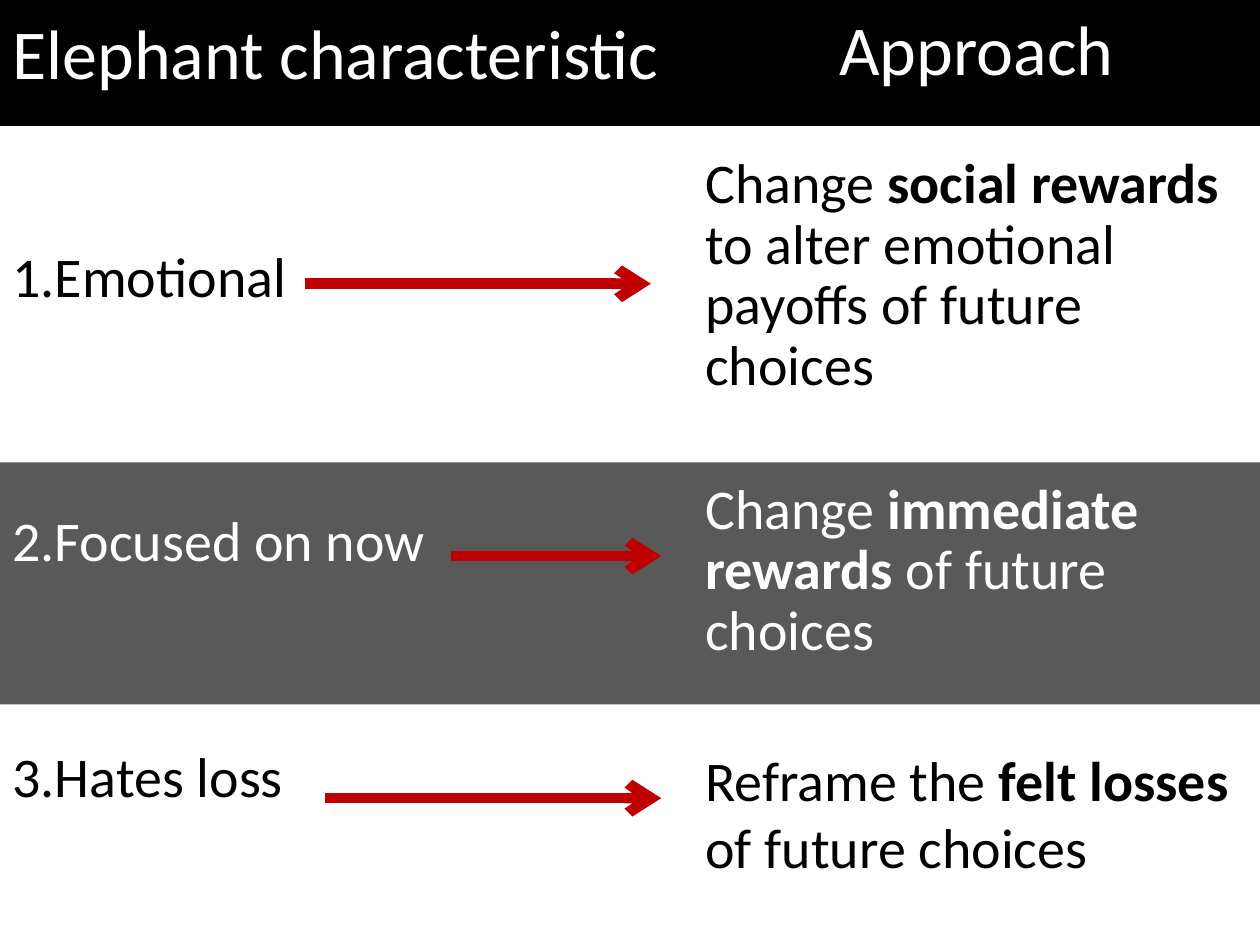
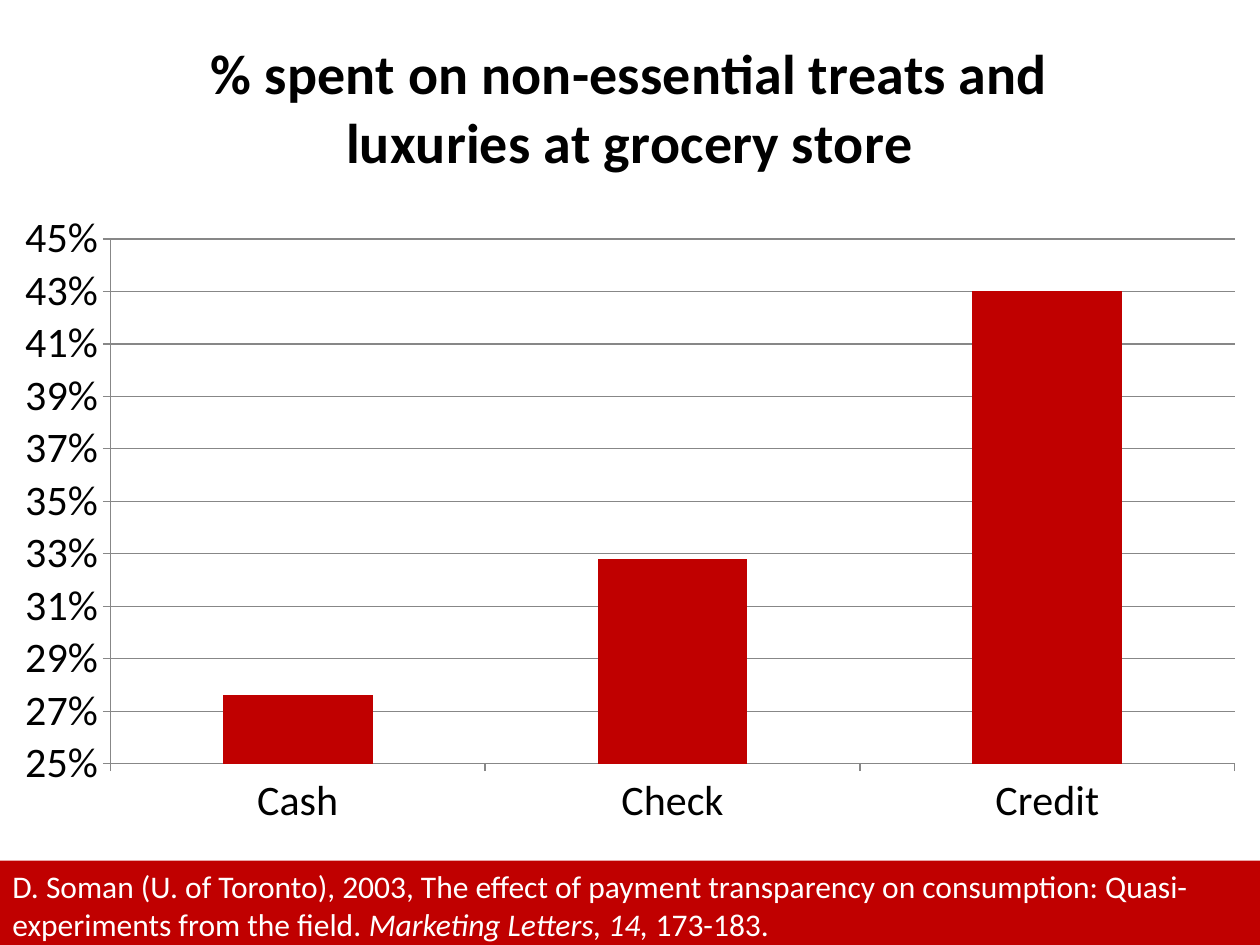
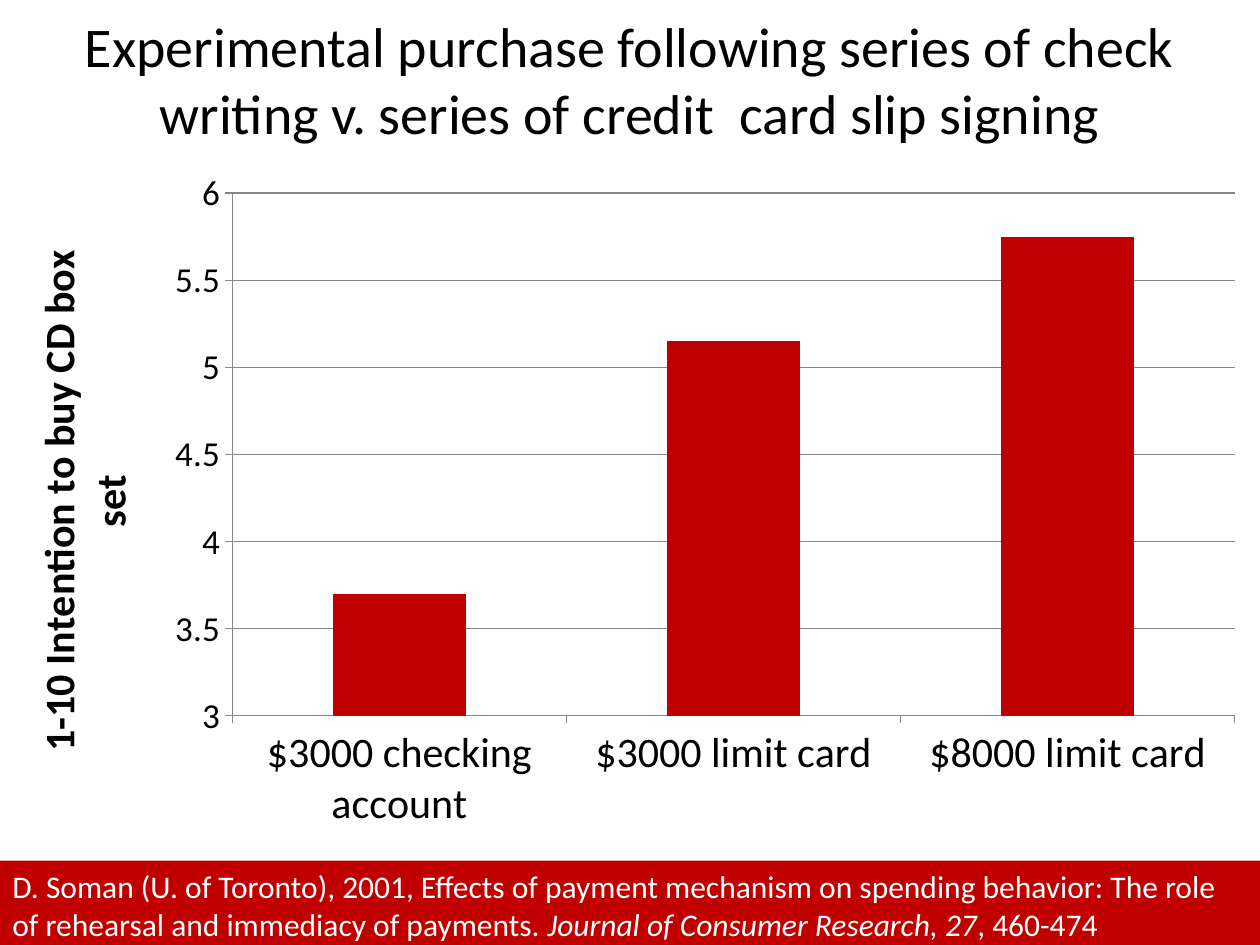
from dataclasses import dataclass

from lxml import etree
from pptx import Presentation
from pptx.chart.data import CategoryChartData
from pptx.dml.color import RGBColor
from pptx.enum.chart import XL_CHART_TYPE, XL_TICK_MARK
from pptx.enum.shapes import MSO_CONNECTOR, MSO_SHAPE
from pptx.enum.text import MSO_ANCHOR, PP_ALIGN
from pptx.oxml.ns import qn
from pptx.util import Cm, Pt

COLUMNS = XL_CHART_TYPE.COLUMN_CLUSTERED
TICK_OUTSIDE = XL_TICK_MARK.OUTSIDE
STRAIGHT = MSO_CONNECTOR.STRAIGHT
RECTANGLE = MSO_SHAPE.RECTANGLE
TOP, MIDDLE = MSO_ANCHOR.TOP, MSO_ANCHOR.MIDDLE
LEFT, CENTER = PP_ALIGN.LEFT, PP_ALIGN.CENTER


@dataclass(frozen=True)
class Theme:
    font: str = "Calibri"
    black: RGBColor = RGBColor(0x00, 0x00, 0x00)
    white: RGBColor = RGBColor(0xFF, 0xFF, 0xFF)
    gray: RGBColor = RGBColor(0x59, 0x59, 0x59)
    red: RGBColor = RGBColor(0xC0, 0x00, 0x00)
    grid: RGBColor = RGBColor(0x87, 0x87, 0x87)
    heading: int = 40
    body: int = 32
    axis: int = 24
    small_axis: int = 20
    source: int = 18
    arrow: int = 6


theme = Theme()
WIDTH, HEIGHT = 25.4, 19.05
INSET = 0.25


def add_band(page, top, height, color):
    band = page.shapes.add_shape(RECTANGLE, 0, Cm(top), Cm(WIDTH), Cm(height))
    band.shadow.inherit = False
    band.fill.solid()
    band.fill.fore_color.rgb = color
    band.line.fill.background()
    return band


def write(box, spans, size=theme.body, color=theme.black, align=LEFT,
          anchor=TOP, spacing=1.0, padding=0.0, number=None):
    """Fill a box with one paragraph of (text, style) spans; style is "", "b" or "i"."""
    frame = box.text_frame
    frame.word_wrap = True
    frame.vertical_anchor = anchor
    frame.margin_left = frame.margin_right = Cm(INSET)
    frame.margin_top = frame.margin_bottom = Cm(padding)
    para = frame.paragraphs[0]
    para.alignment = align
    para.line_spacing = spacing
    for text, style in spans:
        span = para.add_run()
        span.text = text
        span.font.name = theme.font
        span.font.size = Pt(size)
        span.font.color.rgb = color
        span.font.bold = style == "b"
        span.font.italic = style == "i"
    if number:
        properties = para._p.get_or_add_pPr()
        properties.set("marL", "0")
        properties.set("indent", "0")
        etree.SubElement(properties, qn("a:buFont"), typeface="+mj-lt")
        etree.SubElement(properties, qn("a:buAutoNum"),
                         type="arabicPeriod", startAt=str(number))


deck = Presentation()
deck.slide_width, deck.slide_height = Cm(WIDTH), Cm(HEIGHT)
blank = deck.slide_layouts[6]

# Slide 1: characteristics and approaches
page = deck.slides.add_slide(blank)
add_band(page, 0, 2.54, theme.black)
add_band(page, 9.32, 4.88, theme.gray)

LEFT_COLUMN = (0, 13.77)
RIGHT_COLUMN = (13.97, 11.43)
headings = [
    ("Elephant characteristic", LEFT_COLUMN, 0.19, LEFT, 1.0),
    ("Approach", RIGHT_COLUMN, 0.3, CENTER, 0.9),
]
for text, (left, width), top, align, spacing in headings:
    box = page.shapes.add_textbox(Cm(left), Cm(top), Cm(width), Cm(1.8))
    write(box, [(text, "")], size=theme.heading, color=theme.white,
          align=align, spacing=spacing)

# characteristic, its top, approach, its top, line spacing, colour, arrow (start, end, height)
rows = [
    ("Emotional", 4.87,
     [("Change ", ""), ("social rewards ", "b"),
      ("to alter emotional payoffs of future choices", "")],
     3.13, 0.9, theme.black, (6.14, 13.12, 5.72)),
    ("Focused on now", 10.2,
     [("Change ", ""), ("immediate rewards", "b"), (" of future choices", "")],
     9.69, 0.9, theme.white, (9.1, 13.33, 11.21)),
    ("Hates loss", 14.95,
     [("Reframe the ", ""), ("felt losses", "b"), (" of future choices", "")],
     15.03, 1.0, theme.black, (6.56, 13.33, 16.09)),
]
for number, row in enumerate(rows, start=1):
    name, name_top, approach, approach_top, spacing, color, (start, end, level) = row
    left, width = LEFT_COLUMN
    box = page.shapes.add_textbox(Cm(left), Cm(name_top), Cm(width), Cm(1.4))
    write(box, [(name, "")], color=color, number=number)
    left, width = RIGHT_COLUMN
    box = page.shapes.add_textbox(Cm(left), Cm(approach_top), Cm(width), Cm(3.9))
    write(box, approach, color=color, spacing=spacing)
    arrow = page.shapes.add_connector(STRAIGHT, Cm(start), Cm(level), Cm(end), Cm(level))
    arrow.line.color.rgb = theme.red
    arrow.line.width = Pt(theme.arrow)
    etree.SubElement(arrow.line._get_or_add_ln(), qn("a:tailEnd"), type="arrow")
    etree.SubElement(arrow._element.spPr, qn("a:effectLst"))

# Slides 2 and 3: one column chart and its source each
TREATS = "% spent on non-essential treats and luxuries at grocery store"
studies = [
    dict(
        heading=None, chart_title=TREATS, axis_title=None,
        series=TREATS, values={"Cash": 0.276, "Check": 0.328, "Credit": 0.43},
        scale=(0.25, 0.45, 0.02), number_format="0%", value_size=theme.axis, top=0,
        source=[
            ("D. Soman (U. of Toronto), 2003, The effect of payment transparency on "
             "consumption: Quasi-experiments from the field. ", ""),
            ("Marketing Letters, 14,", "i"), (" 173-183.", ""),
        ],
    ),
    dict(
        heading="Experimental purchase following series of check writing "
                "v. series of credit  card slip signing",
        chart_title=None, axis_title="1-10 Intention to buy CD box set",
        series="Series 1",
        values={"$3000 checking account": 3.7, "$3000 limit card": 5.15,
                "$8000 limit card": 5.75},
        scale=(3, 6, 0.5), number_format="General", value_size=theme.small_axis, top=3.18,
        source=[
            ("D. Soman (U. of Toronto), 2001, Effects of payment mechanism on spending "
             "behavior: The role of rehearsal and immediacy of payments. ", ""),
            ("Journal of Consumer Research, 27", "i"), (", 460-474", ""),
        ],
    ),
]
CHART_BOTTOM = 17.02
for study in studies:
    page = deck.slides.add_slide(blank)
    top = study["top"]
    if study["heading"]:
        box = page.shapes.add_textbox(0, 0, Cm(WIDTH), Cm(top))
        write(box, [(study["heading"], "")], align=CENTER, anchor=MIDDLE, padding=0.13)

    chart_data = CategoryChartData(number_format=study["number_format"])
    chart_data.categories = list(study["values"])
    chart_data.add_series(study["series"], list(study["values"].values()))
    chart = page.shapes.add_chart(COLUMNS, 0, Cm(top), Cm(WIDTH),
                                  Cm(CHART_BOTTOM - top), chart_data).chart
    chart.has_legend = False
    chart.font.name = theme.font
    chart.font.size = Pt(10)
    chart.font.color.rgb = theme.black

    plot = chart.plots[0]
    plot.gap_width = 150
    plot.vary_by_categories = False
    columns = plot.series[0].format.fill
    columns.solid()
    columns.fore_color.rgb = theme.red

    value_axis = chart.value_axis
    value_axis.minimum_scale, value_axis.maximum_scale, value_axis.major_unit = study["scale"]
    value_axis.has_major_gridlines = True
    value_axis.major_gridlines.format.line.color.rgb = theme.grid
    value_axis.tick_labels.number_format = study["number_format"]
    value_axis.tick_labels.number_format_is_linked = False
    for axis, size in ((chart.category_axis, theme.axis), (value_axis, study["value_size"])):
        axis.major_tick_mark = TICK_OUTSIDE
        axis.format.line.color.rgb = theme.grid
        axis.tick_labels.font.size = Pt(size)

    chart.has_title = bool(study["chart_title"])
    titles = []
    if study["chart_title"]:
        titles.append((chart.chart_title, study["chart_title"], theme.body))
    if study["axis_title"]:
        titles.append((value_axis.axis_title, study["axis_title"], theme.axis))
    for title, text, size in titles:
        span = title.text_frame.paragraphs[0].add_run()
        span.text = text
        span.font.name = theme.font
        span.font.size = Pt(size)
        span.font.bold = True
        span.font.color.rgb = theme.black
    if study["axis_title"]:
        body = value_axis.axis_title.element.find(".//" + qn("a:bodyPr"))
        body.set("rot", "-5400000")
        body.set("vert", "horz")

    footer = add_band(page, 17.35, 1.8, theme.red)
    write(footer, study["source"], size=theme.source, color=theme.white, padding=0.13)

deck.save("out.pptx")
